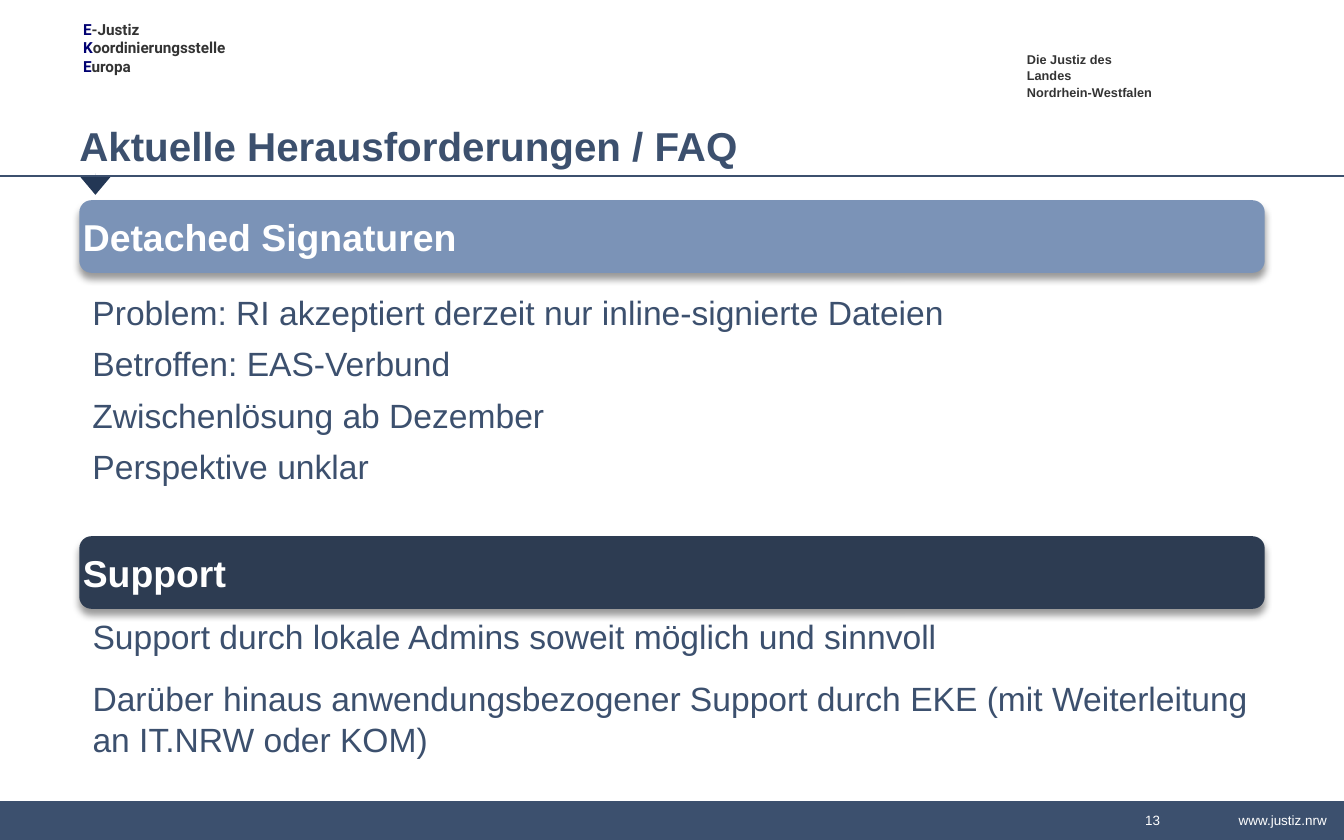
from lxml.etree import SubElement
from pptx import Presentation
from pptx.dml.color import RGBColor
from pptx.enum.shapes import MSO_CONNECTOR, MSO_SHAPE
from pptx.enum.text import MSO_ANCHOR, PP_ALIGN
from pptx.oxml.ns import qn
from pptx.util import Inches, Pt

WHITE = RGBColor(0xFF, 0xFF, 0xFF)
SLATE = RGBColor(0x3C, 0x50, 0x6E)
NAVY = RGBColor(0x23, 0x37, 0x55)
LIGHT_BLUE = RGBColor(0x7B, 0x93, 0xB7)
DARK_BLUE = RGBColor(0x2D, 0x3C, 0x52)
INITIAL_BLUE = RGBColor(0x00, 0x00, 0x71)
GREY = RGBColor(0x33, 0x33, 0x33)
BLACK = RGBColor(0x00, 0x00, 0x00)


def fill_text(shape, paragraphs, size, bold=False, font="Arial", inset=True, wrap=True,
              anchor=MSO_ANCHOR.TOP, align=PP_ALIGN.LEFT, space_after=0):
    """Write paragraphs, each a list of (text, colour) runs; a newline is a line break."""
    frame = shape.text_frame
    frame.word_wrap = wrap
    frame.vertical_anchor = anchor
    if not inset:
        frame.margin_left = frame.margin_right = frame.margin_top = frame.margin_bottom = 0
    for index, runs in enumerate(paragraphs):
        paragraph = frame.add_paragraph() if index else frame.paragraphs[0]
        paragraph.alignment = align
        paragraph.space_after = Pt(space_after)
        for text, colour in runs:
            for line_index, line in enumerate(text.split("\n")):
                if line_index:
                    paragraph.add_line_break()
                run = paragraph.add_run()
                run.text = line
                run.font.name = font
                run.font.size = Pt(size)
                run.font.bold = bold
                run.font.color.rgb = colour


def add_solid(kind, left, top, width, height, colour):
    shape = slide.shapes.add_shape(kind, Inches(left), Inches(top), Inches(width), Inches(height))
    shape.shadow.inherit = False
    shape.fill.solid()
    shape.fill.fore_color.rgb = colour
    shape.line.fill.background()
    return shape


presentation = Presentation()
presentation.slide_width = Inches(10)
presentation.slide_height = Inches(6.25)
slide = presentation.slides.add_slide(presentation.slide_layouts[6])
shapes = slide.shapes

# Header
office = shapes.add_textbox(Inches(0.52), Inches(0.1), Inches(1.87), Inches(0.52))
office_words = ["E-Justiz", "Koordinierungsstelle", "Europa"]
fill_text(office, [[(word[0], INITIAL_BLUE), (word[1:], GREY)] for word in office_words],
          8.2, bold=True, font="Roboto")

authority = shapes.add_textbox(Inches(7.64), Inches(0.37), Inches(0.99), Inches(0.25))
fill_text(authority, [[("Die Justiz des Landes\nNordrhein-Westfalen", GREY)]],
          6.8, bold=True, inset=False, wrap=False)
authority.text_frame.paragraphs[0].line_spacing = Pt(9)

# Title with rule and pointer
pointer = add_solid(MSO_SHAPE.DOWN_ARROW, 0.59, 1.29, 0.24, 0.16, NAVY)
pointer.adjustments[0] = 0
pointer.adjustments[1] = 0.89

rule = shapes.add_connector(MSO_CONNECTOR.STRAIGHT, 0, Inches(1.31), Inches(10), Inches(1.31))
rule.line.color.rgb = SLATE
rule.line.width = Pt(1.5)
SubElement(rule.element.spPr, qn("a:effectLst"))

title = shapes.add_textbox(Inches(0.59), Inches(0.9), Inches(8.15), Inches(0.5))
fill_text(title, [[("Aktuelle Herausforderungen / FAQ", SLATE)]], 21.6, bold=True, inset=False)

# Sections: heading, bar top, bar colour, body top, width, height, wrap, space after, body lines
sections = [
    ("Detached Signaturen", 1.49, LIGHT_BLUE, 2.12, 6.6, 1.57, False, 6, [
        "Problem: RI akzeptiert derzeit nur inline-signierte Dateien",
        "Betroffen: EAS-Verbund",
        "Zwischenlösung ab Dezember",
        "Perspektive unklar",
    ]),
    ("Support", 3.99, DARK_BLUE, 4.53, 8.82, 1.18, True, 12, [
        "Support durch lokale Admins soweit möglich und sinnvoll",
        "Darüber hinaus anwendungsbezogener Support durch EKE "
        "(mit Weiterleitung an IT.NRW oder KOM)",
    ]),
]
for heading, bar_top, colour, body_top, width, height, wrap, space_after, lines in sections:
    bar = add_solid(MSO_SHAPE.ROUNDED_RECTANGLE, 0.59, bar_top, 8.82, 0.54, colour)
    effects = bar.element.spPr.find(qn("a:effectLst"))
    shadow = SubElement(effects, qn("a:outerShdw"), blurRad=str(Pt(4)), dist=str(Pt(3)),
                        dir=str(90 * 60000), rotWithShape="0")
    shadow_colour = SubElement(shadow, qn("a:srgbClr"), val=str(BLACK))
    SubElement(shadow_colour, qn("a:alpha"), val="40000")
    fill_text(bar, [[(heading, WHITE)]], 20, bold=True, inset=False, anchor=MSO_ANCHOR.MIDDLE)

    body = shapes.add_textbox(Inches(0.59), Inches(body_top), Inches(width), Inches(height))
    fill_text(body, [[(line, SLATE)] for line in lines], 18, wrap=wrap, space_after=space_after)

# Footer
add_solid(MSO_SHAPE.RECTANGLE, 0, 5.96, 10, 0.29, SLATE)
for text, left, top, width, height in [
    ("13", 7.81, 5.96, 0.92, 0.29),
    ("www.justiz.nrw", 8.95, 5.99, 1.02, 0.22),
]:
    label = shapes.add_textbox(Inches(left), Inches(top), Inches(width), Inches(height))
    fill_text(label, [[(text, WHITE)]], 7.2, anchor=MSO_ANCHOR.MIDDLE, align=PP_ALIGN.RIGHT)

presentation.save("out.pptx")
